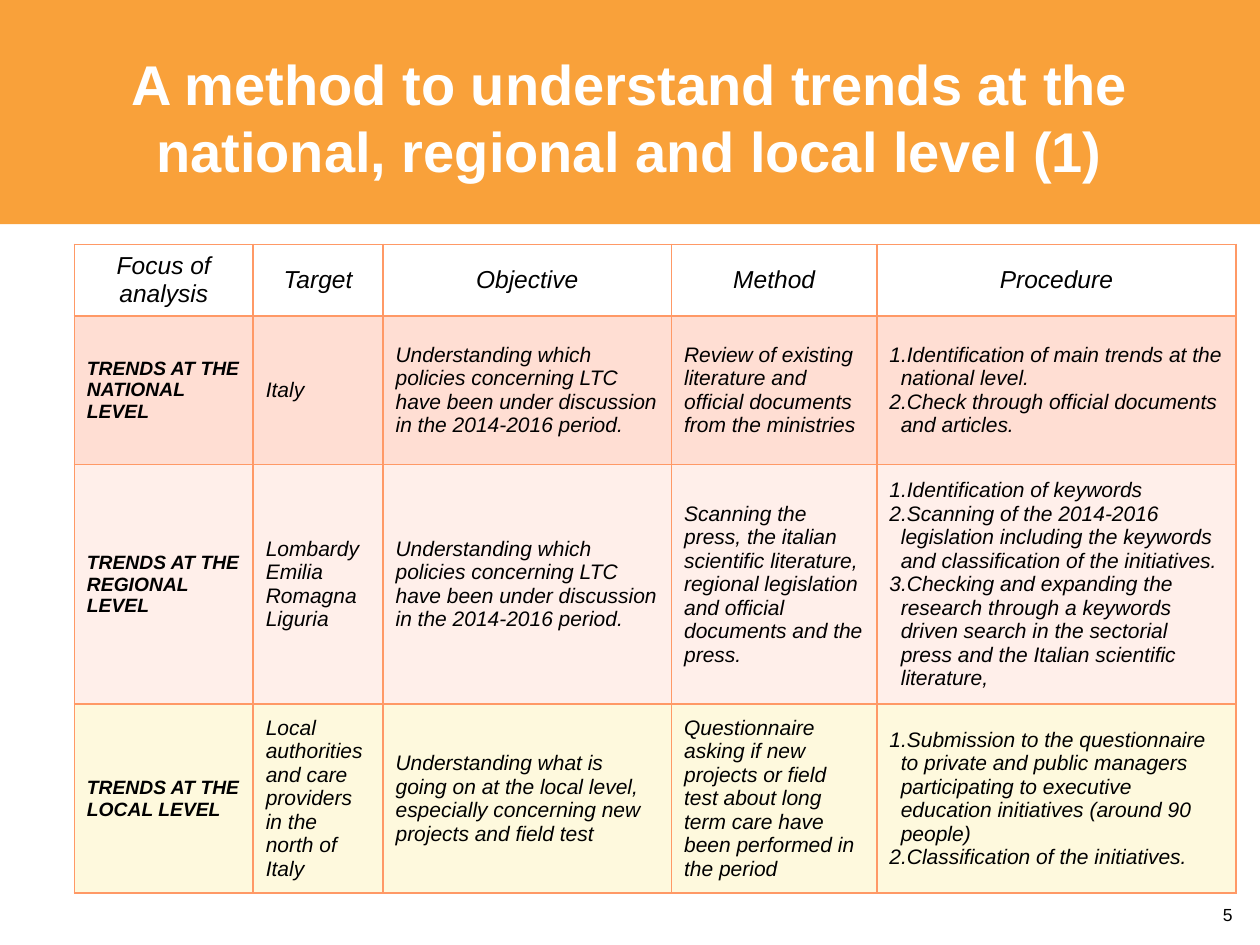
from lxml.etree import SubElement
from pptx import Presentation
from pptx.dml.color import RGBColor
from pptx.enum.shapes import MSO_SHAPE
from pptx.enum.text import MSO_ANCHOR, PP_ALIGN
from pptx.oxml.ns import qn
from pptx.util import Inches, Pt

TITLE = "A method to understand trends at the national, regional and local level (1)"
PAGE_NUMBER = "5"
HEADERS = ["Focus of analysis", "Target", "Objective", "Method", "Procedure"]
POLICY_OBJECTIVE = ("Understanding which policies concerning LTC have been "
                    "under discussion in the 2014-2016 period.")
# Each cell is a list of paragraphs
LEVELS = [
    [
        ["TRENDS AT THE NATIONAL LEVEL"],
        ["Italy"],
        [POLICY_OBJECTIVE],
        ["Review of existing literature and official documents from the ministries"],
        ["Identification of main trends at the national level.",
         "Check through official documents and articles."],
    ],
    [
        ["TRENDS AT THE REGIONAL LEVEL"],
        ["Lombardy", "Emilia Romagna", "Liguria"],
        [POLICY_OBJECTIVE],
        ["Scanning the press, the italian scientific literature, regional "
         "legislation and official documents and the press."],
        ["Identification of keywords",
         "Scanning of the 2014-2016 legislation including the keywords and "
         "classification of the initiatives.",
         "Checking and expanding the research through a keywords driven search "
         "in the sectorial press and the Italian scientific literature,"],
    ],
    [
        ["TRENDS AT THE LOCAL LEVEL"],
        ["Local authorities and care providers in the north of Italy"],
        ["Understanding what is going on at the local level, especially "
         "concerning new projects and field test"],
        ["Questionnaire asking if new projects or field test about long term "
         "care have been performed in the period"],
        ["Submission to the questionnaire to private and public managers "
         "participating to executive education initiatives (around 90 people)",
         "Classification of the initiatives."],
    ],
]
COLUMN_WIDTHS = [1.42, 1.03, 2.29, 1.63, 2.85]
ROW_HEIGHTS = [0.54, 1.18, 1.78, 1.41]
NUMBER_INDENT = Inches(0.09)

THEME = {
    "font": "Arial",
    "banner": "F9A13A",
    "border": "FF9966",
    "white": "FFFFFF",
    "text": "000000",
    "rows": ["FFFFFF", "FFDED3", "FFEFEA", "FEF9DD"],
    "title_size": 32,
    "header_size": 14,
    "label_size": 11,
    "body_size": 12,
    "page_size": 10,
}


def style(paragraph, size, color, bold=False, italic=False, align=PP_ALIGN.LEFT):
    paragraph.alignment = align
    for run in paragraph.runs:
        font = run.font
        font.name, font.size = THEME["font"], Pt(size)
        font.bold, font.italic = bold, italic
        font.color.rgb = RGBColor.from_string(color)


def add_text(slide, box, text, size, color, **options):
    frame = slide.shapes.add_textbox(*map(Inches, box)).text_frame
    frame.word_wrap = True
    frame.vertical_anchor = MSO_ANCHOR.MIDDLE
    frame.text = text
    style(frame.paragraphs[0], size, color, **options)


def number_paragraph(paragraph):
    properties = paragraph._p.get_or_add_pPr()
    properties.set("marL", str(NUMBER_INDENT))
    properties.set("indent", str(-NUMBER_INDENT))
    SubElement(properties, qn("a:buFont"), typeface=THEME["font"])
    SubElement(properties, qn("a:buAutoNum"), type="arabicPeriod")
    tabs = SubElement(properties, qn("a:tabLst"))
    SubElement(tabs, qn("a:tab"), pos=str(NUMBER_INDENT), algn="l")


def add_borders(cell):
    """Draw all four cell edges; must run before the cell gets its fill."""
    properties = cell._tc.get_or_add_tcPr()
    for edge in ("a:lnL", "a:lnR", "a:lnT", "a:lnB"):
        line = SubElement(properties, qn(edge), w=str(Pt(1)))
        fill = SubElement(line, qn("a:solidFill"))
        SubElement(fill, qn("a:srgbClr"), val=THEME["border"])


def fill_cell(cell, paragraphs, row, column):
    add_borders(cell)
    cell.fill.solid()
    cell.fill.fore_color.rgb = RGBColor.from_string(THEME["rows"][row])
    cell.vertical_anchor = MSO_ANCHOR.MIDDLE
    cell.text_frame.text = "\n".join(paragraphs)
    is_header, is_label = row == 0, row > 0 and column == 0
    size = THEME["header_size" if is_header else "label_size" if is_label else "body_size"]
    for paragraph in cell.text_frame.paragraphs:
        if len(HEADERS) - 1 == column and not is_header:
            number_paragraph(paragraph)
        style(paragraph, size, THEME["text"], bold=is_label, italic=True,
              align=PP_ALIGN.CENTER if is_header else PP_ALIGN.LEFT)


def add_levels_table(slide):
    rows = [[[header] for header in HEADERS]] + LEVELS
    table = slide.shapes.add_table(
        len(rows), len(HEADERS), Inches(0.59), Inches(1.94),
        Inches(sum(COLUMN_WIDTHS)), Inches(sum(ROW_HEIGHTS))).table
    table.first_row = table.horz_banding = False
    for column, width in zip(table.columns, COLUMN_WIDTHS):
        column.width = Inches(width)
    for row, height in zip(table.rows, ROW_HEIGHTS):
        row.height = Inches(height)
    for row, cells in enumerate(rows):
        for column, paragraphs in enumerate(cells):
            fill_cell(table.cell(row, column), paragraphs, row, column)


def main():
    presentation = Presentation()
    presentation.slide_width, presentation.slide_height = Inches(10), Inches(7.5)
    slide = presentation.slides.add_slide(presentation.slide_layouts[6])

    banner = slide.shapes.add_shape(MSO_SHAPE.RECTANGLE, 0, 0, Inches(10), Inches(1.78))
    banner.shadow.inherit = False
    banner.fill.solid()
    banner.fill.fore_color.rgb = RGBColor.from_string(THEME["banner"])
    banner.line.fill.background()

    add_text(slide, (0.5, 0.3, 9, 1.25), TITLE, THEME["title_size"], THEME["white"],
             bold=True, align=PP_ALIGN.CENTER)
    add_levels_table(slide)
    add_text(slide, (8.44, 7.14, 1.44, 0.24), PAGE_NUMBER, THEME["page_size"],
             THEME["text"], align=PP_ALIGN.RIGHT)
    presentation.save("out.pptx")


if __name__ == "__main__":
    main()
